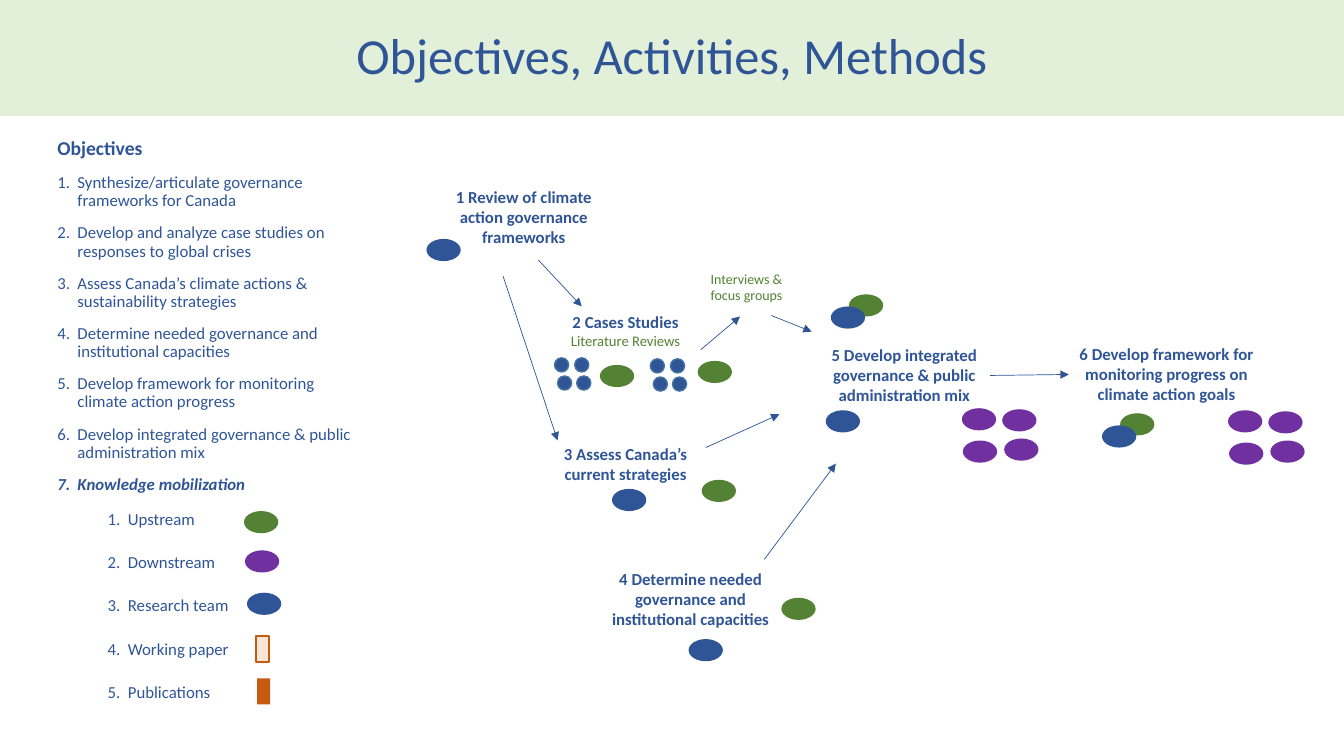
from lxml import etree
from pptx import Presentation
from pptx.dml.color import RGBColor
from pptx.enum.shapes import MSO_CONNECTOR as CONN, MSO_SHAPE as SHAPE
from pptx.enum.text import MSO_ANCHOR as ANCHOR, MSO_AUTO_SIZE as FIT, PP_ALIGN as ALIGN
from pptx.oxml.ns import qn
from pptx.util import Inches, Pt

BLUE, GREEN, PURPLE = "2F5597", "548235", "7030A0"
ORANGE, PEACH, MINT, STEEL = "C55A11", "FBE5D6", "E2F0D9", "43739E"
CELL = Inches(0.1)
OVAL = (3.4, 2.2)
DOT = (1.4, 1.4)
PAGE = (1.3, 2.6)

OBJECTIVES = [
    "Synthesize/articulate governance frameworks for Canada",
    "Develop and analyze case studies on responses to global crises",
    "Assess Canada’s climate actions & sustainability strategies",
    "Determine needed governance and institutional capacities",
    "Develop framework for monitoring climate action progress",
    "Develop integrated governance & public administration mix",
]
LEGEND = ["Upstream", "Downstream", "Research team", "Working paper", "Publications"]
STEPS = {
    1: ((44, 18, 15.9, 7.1), "1 Review of climate action governance frameworks"),
    3: ((54.6, 43.5, 14.9, 5), "3 Assess Canada’s current strategies"),
    4: ((59.6, 55.9, 17.8, 7.1), "4 Determine needed governance and institutional capacities"),
    5: ((81.2, 33.7, 17, 7.1), "5 Develop integrated governance & public administration mix"),
    6: ((106, 33.6, 19.4, 7.1), "6 Develop framework for monitoring progress on climate action goals"),
}
ARROWS = [
    (53.4, 25.8, 57.7, 30.4), (69.5, 34.7, 73.4, 31.4), (70, 44.4, 77.3, 41.1),
    (75.8, 55.5, 82.9, 46), (76.5, 31.3, 80.5, 32.9), (49.9, 27.4, 55.3, 43.7),
]
OVALS = {
    GREEN: [(24.2, 50.7), (84.2, 29.2), (69.6, 47.6), (77.5, 59.3),
            (59.5, 36.2), (69.2, 35.8), (111.1, 41)],
    BLUE: [(42.3, 23.7), (24.5, 58.8), (82.4, 30.4), (60.7, 48.5),
           (81.9, 40.7), (68.3, 63.4), (109.3, 42.2)],
    PURPLE: [(24.3, 54.6)],
}
DOT_GROUPS = [(55, 35.5), (64.5, 35.6)]
DOT_STEPS = [(0, 0), (2, 0), (0.3, 1.8), (2.2, 1.8)]
DOWNSTREAM_GROUPS = [(95.4, 40.5), (121.8, 40.7)]
DOWNSTREAM_STEPS = [(0, 0), (4, 0.1), (0.1, 3.2), (4.2, 3)]


def cells(*counts):
    return [round(n * CELL) for n in counts]


def rgb(code):
    return RGBColor.from_string(code)


def apply(target, formats):
    for name, value in formats.items():
        setattr(target, name, value)


def add_run(p, text, size, color=BLUE, **formats):
    r = p.add_run()
    r.text = text
    apply(r.font, {"name": "Calibri", "size": Pt(size), **formats})
    r.font.color.rgb = rgb(color)


def number(p, margin):
    pPr = p._p.get_or_add_pPr()
    pPr.set("marL", str(Inches(margin)))
    pPr.set("indent", str(Inches(-0.2)))
    etree.SubElement(pPr, qn("a:buFont"), typeface="+mj-lt")
    etree.SubElement(pPr, qn("a:buAutoNum"), type="arabicPeriod")


def add_box(s, at, runs=(), align=ALIGN.CENTER, fit=FIT.SHAPE_TO_FIT_TEXT):
    sp = s.shapes.add_textbox(*cells(*at))
    apply(sp.text_frame, {"word_wrap": True, "auto_size": fit})
    p = sp.text_frame.paragraphs[0]
    p.alignment = align
    for text, size, color, bold in runs:
        add_run(p, text, size, color, bold=bold)
    return sp


def add_mark(s, kind, at, size, fill, line=None):
    sp = s.shapes.add_shape(kind, *cells(*at, *size))
    sp.shadow.inherit = False
    sp.fill.solid()
    sp.fill.fore_color.rgb = rgb(fill)
    if line:
        sp.line.color.rgb = rgb(line)
        sp.line.width = Pt(1)
    else:
        sp.line.fill.background()


def add_group(s, origins, steps, size, fill, line=None):
    for x, y in origins:
        for dx, dy in steps:
            add_mark(s, SHAPE.OVAL, (x + dx, y + dy), size, fill, line)


def add_arrow(s, ends):
    c = s.shapes.add_connector(CONN.STRAIGHT, *cells(*ends))
    c.line.color.rgb = rgb(BLUE)
    c.line.width = Pt(0.5)
    etree.SubElement(c.line._get_or_add_ln(), qn("a:tailEnd"), type="triangle")
    etree.SubElement(c._element.spPr, qn("a:effectLst"))
    return c


def add_title(s, width):
    sp = s.shapes.title
    left, top, height = cells(0, 0, 11.5)
    apply(sp, {"left": left, "top": top, "width": width, "height": height})
    sp.fill.solid()
    sp.fill.fore_color.rgb = rgb(MINT)
    apply(sp.text_frame, {"vertical_anchor": ANCHOR.MIDDLE, "word_wrap": True})
    p = sp.text_frame.paragraphs[0]
    apply(p, {"alignment": ALIGN.CENTER, "line_spacing": 0.9, "space_after": Pt(12)})
    add_run(p, "Objectives, Activities, Methods", 36)


def add_objectives(s):
    tf = add_box(s, (4.7, 13.3, 31.6, 62), [("Objectives", 14, BLUE, True)],
                 ALIGN.LEFT, FIT.NONE).text_frame
    apply(tf.paragraphs[0], {"line_spacing": 0.9, "space_before": Pt(10)})
    items = [(text, 0, 10, False) for text in OBJECTIVES]
    items.append(("Knowledge mobilization", 0, 10, True))
    items += [(text, 1, 18 if i else 12, False) for i, text in enumerate(LEGEND)]
    for text, level, before, strong in items:
        p = tf.add_paragraph()
        apply(p, {"level": level, "line_spacing": 0.9, "space_before": Pt(before)})
        number(p, 0.2 + level / 2)
        add_run(p, text, 12, bold=strong, italic=strong)


def main():
    prs = Presentation()
    prs.slide_width, prs.slide_height = Inches(13.33), Inches(7.5)
    s = prs.slides.add_slide(prs.slide_layouts[5])
    add_title(s, prs.slide_width)
    add_objectives(s)

    boxes = {n: add_box(s, at, [(text, 12, BLUE, True)]) for n, (at, text) in STEPS.items()}
    add_box(s, (54.6, 30.4, 14.9, 4.8),
            [("2 Cases Studies ", 12, BLUE, True), ("Literature Reviews", 10.5, GREEN, False)])
    add_box(s, (69.5, 26.3, 9.9, 4.4),
            [("Interviews & focus groups", 10, GREEN, False)], ALIGN.LEFT)

    for ends in ARROWS:
        add_arrow(s, ends)
    link = add_arrow(s, (98.3, 37.2, 106, 37.2))
    link.begin_connect(boxes[5], 3)
    link.end_connect(boxes[6], 1)

    for color, places in OVALS.items():
        add_group(s, places, [(0, 0)], OVAL, color)
    add_group(s, DOT_GROUPS, DOT_STEPS, DOT, BLUE, STEEL)
    add_group(s, DOWNSTREAM_GROUPS, DOWNSTREAM_STEPS, OVAL, PURPLE)
    add_mark(s, SHAPE.RECTANGLE, (25.4, 63.1), PAGE, PEACH, ORANGE)
    add_mark(s, SHAPE.RECTANGLE, (25.5, 67.3), PAGE, ORANGE)
    prs.save("out.pptx")


if __name__ == "__main__":
    main()
